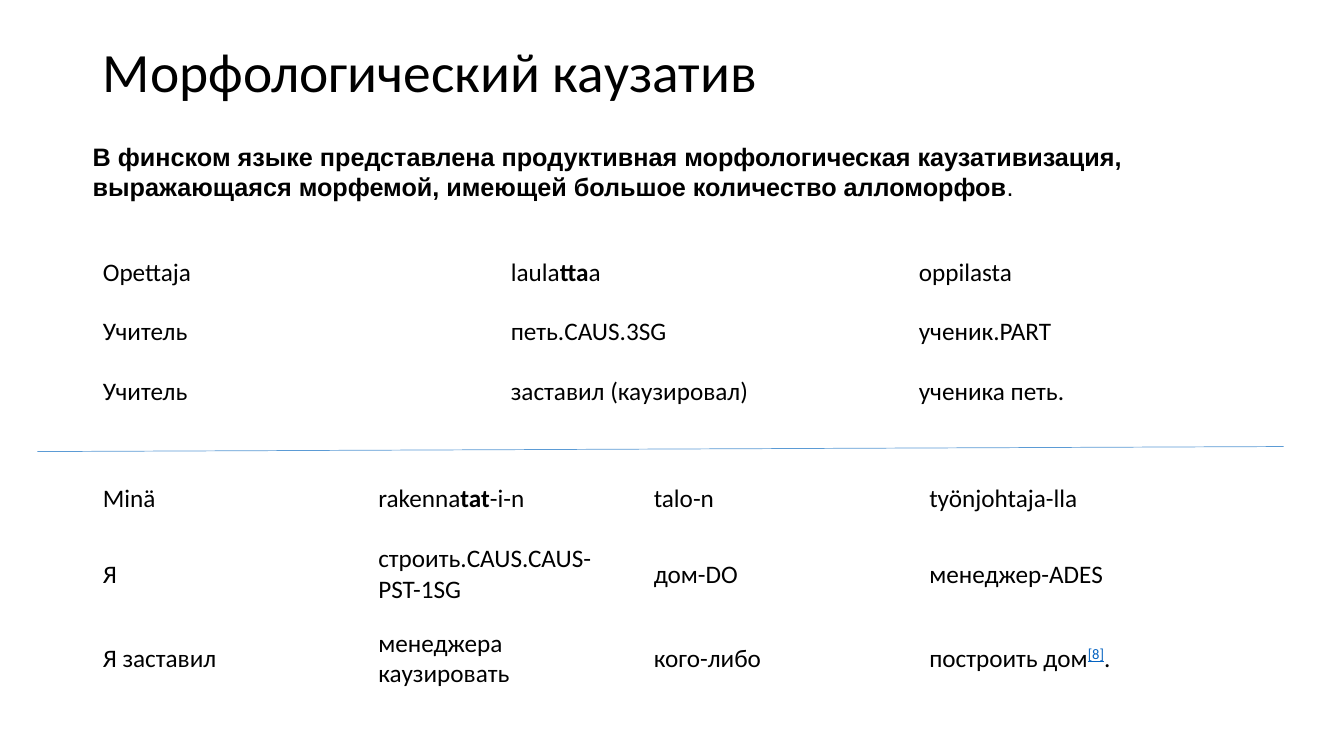
from pptx import Presentation
from pptx.dml.color import RGBColor
from pptx.enum import shapes, text
from pptx.oxml import ns
from pptx.util import Inches, Pt
from lxml import etree

BLACK = RGBColor(0, 0, 0)
BLUE = RGBColor(0x5B, 0x9B, 0xD5)
LINK = RGBColor(0x05, 0x63, 0xC1)

SONG = [
    ["Opettaja", "laula|*tta|a", "oppilasta"],
    ["Учитель", "петь.CAUS.3SG", "ученик.PART"],
    ["Учитель", "заставил (каузировал)", "ученика петь."],
]
HOUSE = [
    ["Minä", "rakenna|*tat|-i-n", "talo-n", "työnjohtaja-lla"],
    ["Я", "строить.CAUS.CAUS-PST-1SG", "дом-DO", "менеджер-ADES"],
    ["Я заставил", "менеджера каузировать", "кого-либо", "построить дом|^[8]|."],
]


def style(par, face, size):
    """Set the face, size and black colour of a paragraph."""
    par.font.name, par.font.size = face, Pt(size)
    par.font.color.rgb = BLACK


def add_title(slide, box, words):
    """Place the title placeholder in its box."""
    title = slide.shapes.title
    title.left, title.top, title.width, title.height = map(Inches, box)
    frame = title.text_frame
    frame.text = words
    frame.auto_size = text.MSO_AUTO_SIZE.NONE
    frame.vertical_anchor = text.MSO_ANCHOR.MIDDLE
    par = frame.paragraphs[0]
    par.alignment = text.PP_ALIGN.LEFT
    par.line_spacing = 0.9
    style(par, "Calibri", 39.6)


def add_claim(slide, box, words, stop):
    """Place the bold statement and its plain full stop."""
    frame = slide.shapes.add_textbox(*map(Inches, box)).text_frame
    frame.word_wrap = True
    frame.margin_left = frame.margin_right = 0
    frame.margin_top = frame.margin_bottom = 0
    par = frame.paragraphs[0]
    style(par, "Arial", 18)
    for part, bold in ((words, True), (stop, False)):
        run = par.add_run()
        run.text, run.font.bold = part, bold


def fill_cell(cell, words):
    """Write parts split by bars: * marks bold, ^ a raised reference."""
    cell.fill.background()
    cell.vertical_anchor = text.MSO_ANCHOR.MIDDLE
    par = cell.text_frame.paragraphs[0]
    style(par, "Calibri", 18)
    for part in words.split("|"):
        run = par.add_run()
        run.text = part.lstrip("*^")
        if part.startswith("*"):
            run.font.bold = True
        elif part.startswith("^"):
            run.font.underline = True
            run.font.color.rgb = LINK
            run.font._element.set("baseline", "30000")


def add_gloss(slide, box, rows, highs):
    """Place a plain table of glossed words with equal columns."""
    left, top, width = box
    count = len(rows[0])
    table = slide.shapes.add_table(
        len(rows), count, Inches(left), Inches(top), Inches(width), Inches(sum(highs))
    ).table
    table.first_row = table.horz_banding = False
    for col in table.columns:
        col.width = Inches(width / count)
    for i, (row, high) in enumerate(zip(rows, highs)):
        table.rows[i].height = Inches(high)
        for j, words in enumerate(row):
            fill_cell(table.cell(i, j), words)


def add_rule(slide, start, end):
    """Draw the thin line between the two examples."""
    line = slide.shapes.add_connector(
        shapes.MSO_CONNECTOR.STRAIGHT, *map(Inches, start + end)
    )
    line.line.color.rgb = BLUE
    line.line.width = Pt(0.5)
    etree.SubElement(line._element.spPr, ns.qn("a:effectLst"))


def main():
    """Build the slide and save it."""
    deck = Presentation()
    deck.slide_width, deck.slide_height = Inches(13.33), Inches(7.5)
    slide = deck.slides.add_slide(deck.slide_layouts[5])
    add_title(slide, (0.92, 0.4, 11.5, 0.68), "Морфологический каузатив")
    add_gloss(slide, (0.92, 2.41, 12.14), SONG, [0.59] * 3)
    add_gloss(slide, (0.92, 4.67, 10.93), HOUSE, [0.55, 0.96, 0.7])
    add_claim(
        slide,
        (0.92, 1.4, 10.64, 0.6),
        "В финском языке представлена продуктивная морфологическая каузативизация, "
        "выражающаяся морфемой, имеющей большое количество алломорфов",
        ".",
    )
    add_rule(slide, (0.37, 4.48), (12.73, 4.43))
    deck.save("out.pptx")


if __name__ == "__main__":
    main()
